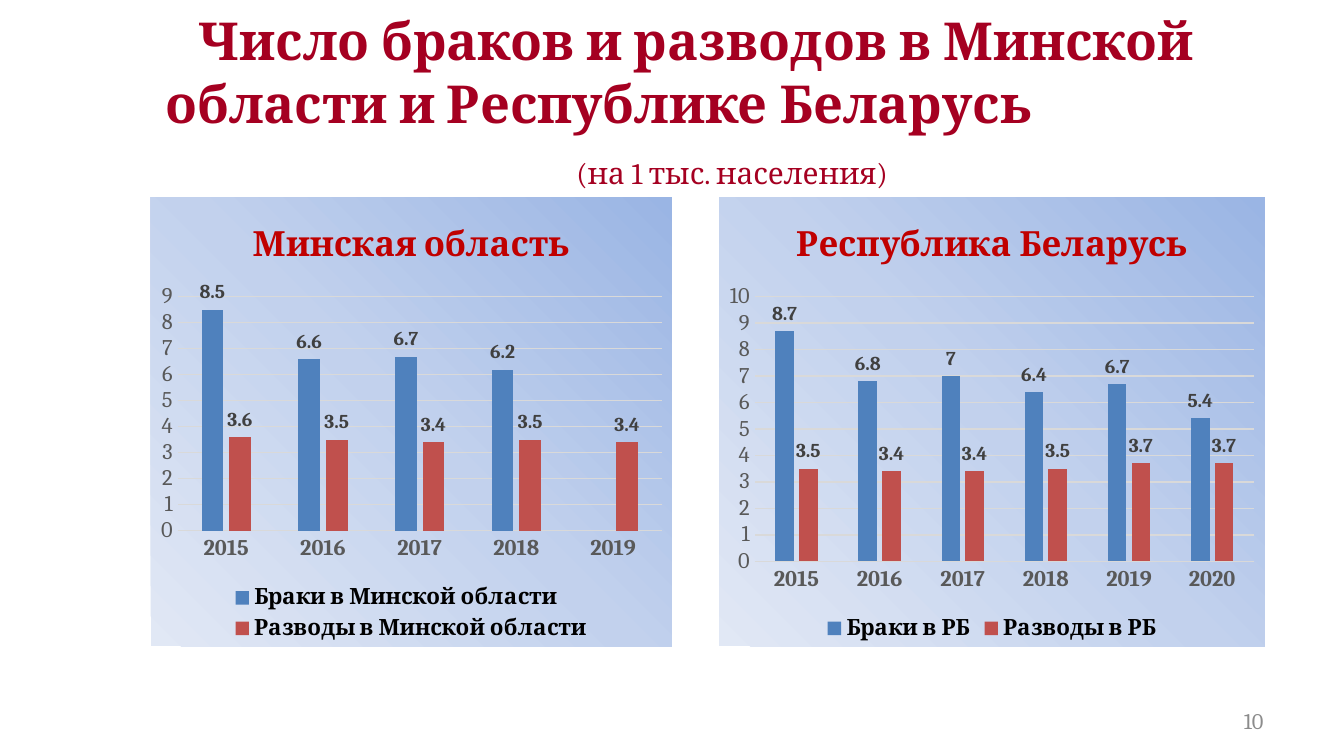
from pptx import Presentation
from pptx.chart.data import CategoryChartData
from pptx.dml.color import RGBColor
from pptx.enum.chart import XL_CHART_TYPE, XL_LABEL_POSITION, XL_LEGEND_POSITION, XL_TICK_MARK
from pptx.enum.text import MSO_ANCHOR, PP_ALIGN
from pptx.oxml import parse_xml
from pptx.oxml.ns import nsdecls
from pptx.util import Inches, Pt

COLUMNS = XL_CHART_TYPE.COLUMN_CLUSTERED
OUTSIDE = XL_LABEL_POSITION.OUTSIDE_END
BOTTOM = XL_LEGEND_POSITION.BOTTOM
NO_TICK = XL_TICK_MARK.NONE
MIDDLE = MSO_ANCHOR.MIDDLE
LEFT, RIGHT = PP_ALIGN.LEFT, PP_ALIGN.RIGHT

FONT = "Cambria"
CRIMSON = RGBColor(0xA5, 0x00, 0x21)
RED = RGBColor(0xC0, 0x00, 0x00)
BLACK = RGBColor(0x00, 0x00, 0x00)
DARK = RGBColor(0x40, 0x40, 0x40)
GRAY = RGBColor(0x59, 0x59, 0x59)
PALE = RGBColor(0xD9, 0xD9, 0xD9)
NUMBER_GRAY = RGBColor(0x8C, 0x8C, 0x8C)
SERIES_COLORS = [RGBColor(0x4F, 0x81, 0xBD), RGBColor(0xC0, 0x50, 0x4D)]
GRADIENT = [(0, "9AB5E4"), (50, "C2D1ED"), (100, "E1E8F5")]

# Content
# Title lines: text, size, bold, left margin, first-line indent, space before
TITLE = [
    ("Число браков и разводов в Минской области и Республике Беларусь", 28, True, 0, 0.25, 0),
    ("(на 1 тыс. населения)", 16, False, 3.06, 0, 11),
]
PAGE_NUMBER = "10"
CHART_TOP, CHART_HEIGHT = 1.47, 3.34
CHARTS = [
    {
        "title": "Минская область", "left": 1.12, "width": 3.88, "maximum": 9,
        "years": ["2015", "2016", "2017", "2018", "2019"],
        "series": [
            ("Браки в Минской области", [8.5, 6.6, 6.7, 6.2, None]),
            ("Разводы в Минской области", [3.6, 3.5, 3.4, 3.5, 3.4]),
        ],
    },
    {
        "title": "Республика Беларусь", "left": 5.35, "width": 4.06, "maximum": 10,
        "years": ["2015", "2016", "2017", "2018", "2019", "2020"],
        "series": [
            ("Браки в РБ", [8.7, 6.8, 7, 6.4, 6.7, 5.4]),
            ("Разводы в РБ", [3.5, 3.4, 3.4, 3.5, 3.7, 3.7]),
        ],
    },
]


def style_font(font, size, color, bold=False):
    font.name, font.size, font.bold = FONT, Pt(size), bold
    font.color.rgb = color


def add_frame(page, left, top, width, height):
    box = page.shapes.add_textbox(Inches(left), Inches(top), Inches(width), Inches(height))
    frame = box.text_frame
    frame.word_wrap = True
    frame.vertical_anchor = MIDDLE
    return frame


def fill_chart_area(chart):
    """Radial gradient that spreads from the top right corner."""
    stops = "".join(
        f'<a:gs pos="{share * 1000}"><a:srgbClr val="{color}"/></a:gs>' for share, color in GRADIENT
    )
    area = parse_xml(
        f'<c:spPr {nsdecls("c", "a")}><a:gradFill><a:gsLst>{stops}</a:gsLst>'
        '<a:path path="circle"><a:fillToRect l="100000" b="100000"/></a:path>'
        "</a:gradFill><a:ln><a:noFill/></a:ln></c:spPr>"
    )
    chart.font._element.getparent().getparent().getparent().addprevious(area)


def add_column_chart(page, content):
    data = CategoryChartData()
    data.categories = content["years"]
    for name, values in content["series"]:
        data.add_series(name, values)
    chart = page.shapes.add_chart(
        COLUMNS, Inches(content["left"]), Inches(CHART_TOP),
        Inches(content["width"]), Inches(CHART_HEIGHT), data,
    ).chart
    style_font(chart.font, 10, BLACK)
    fill_chart_area(chart)

    # Title and legend
    chart.has_title = True
    para = chart.chart_title.text_frame.paragraphs[0]
    para.text = content["title"]
    style_font(para.font, 18.6, RED, True)
    chart.chart_title.include_in_layout = False
    chart.has_legend = True
    chart.legend.position = BOTTOM
    chart.legend.include_in_layout = False
    style_font(chart.legend.font, 12, BLACK, True)

    # Axes
    years, scale = chart.category_axis, chart.value_axis
    for axis in (years, scale):
        axis.major_tick_mark = axis.minor_tick_mark = NO_TICK
        style_font(axis.tick_labels.font, 12, GRAY, axis is years)
    scale.minimum_scale, scale.maximum_scale, scale.major_unit = 0, content["maximum"], 1
    scale.format.line.fill.background()
    for line in (years.format.line, scale.major_gridlines.format.line):
        line.color.rgb = PALE
        line.width = Pt(0.75)

    # Columns and their values
    plot = chart.plots[0]
    plot.gap_width, plot.overlap, plot.vary_by_categories = 219, -27, False
    for series, color in zip(plot.series, SERIES_COLORS):
        series.format.fill.solid()
        series.format.fill.fore_color.rgb = color
        series.invert_if_negative = False
        labels = series.data_labels
        labels.show_value = True
        labels.position = OUTSIDE
        style_font(labels.font, 10.5, DARK, True)


# Widescreen page, 16:9
deck = Presentation()
deck.slide_width, deck.slide_height = Inches(10), Inches(10 * 9 / 16)
page = deck.slides.add_slide(deck.slide_layouts[6])

# Slide title
frame = add_frame(page, 1.13, 0.19, 8.21, 1.1)
for index, (text, size, bold, margin, indent, before) in enumerate(TITLE):
    para = frame.add_paragraph() if index else frame.paragraphs[0]
    para.text = text
    para.alignment = LEFT
    para.space_before = Pt(before)
    properties = para._p.get_or_add_pPr()
    properties.set("marL", str(Inches(margin)))
    properties.set("indent", str(Inches(indent)))
    style_font(para.font, size, CRIMSON, bold)

# Charts
for content in CHARTS:
    add_column_chart(page, content)

# Page number
para = add_frame(page, 7.17, 5.21, 2.33, 0.3).paragraphs[0]
para.text = PAGE_NUMBER
para.alignment = RIGHT
style_font(para.font, 12, NUMBER_GRAY)

deck.save("out.pptx")
